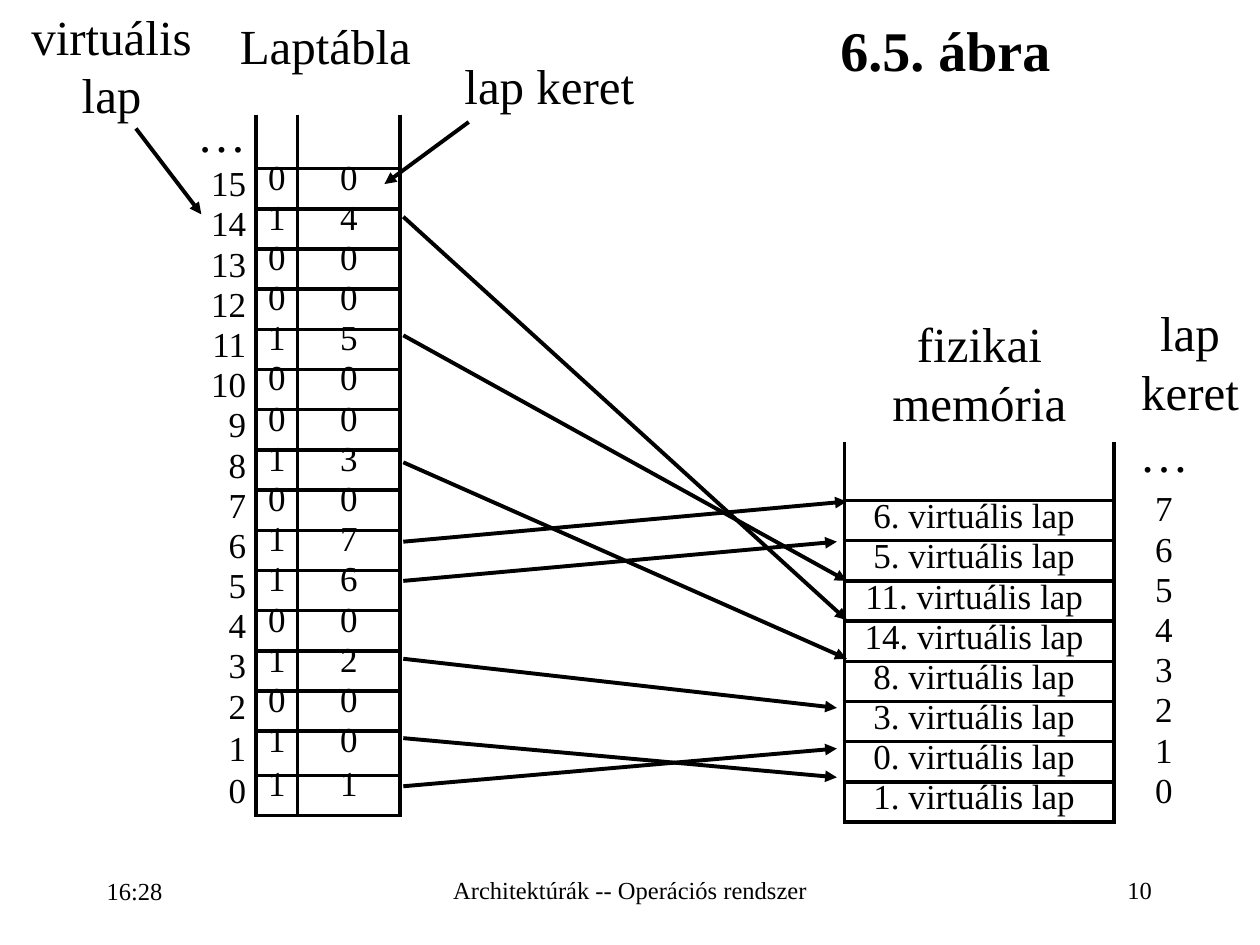
import lxml.etree
import pptx
import pptx.dml.color
import pptx.enum.shapes
import pptx.enum.text
import pptx.oxml.ns
import pptx.util

Cm = pptx.util.Cm
Pt = pptx.util.Pt
qn = pptx.oxml.ns.qn
ALIGN = pptx.enum.text.PP_ALIGN
ANCHOR = pptx.enum.text.MSO_ANCHOR

FONT = "Times New Roman"
COLORS = {"ink": "000000"}
LINE_WIDTH = Pt(2.25)
ROW_HEIGHT = 0.81
NO_GRID_STYLE = "{2D5ABB26-0587-4C30-8999-92F81FD0307C}"
TABLE_PARAGRAPH = {"line_spacing": 0.69, "space_before": Pt(8)}
FOOTER_PARAGRAPH = {"line_spacing": 0.93}

# Page table from virtual page 15 down to 0: (present bit, page frame)
PAGE_TABLE = [(0, 0), (1, 4), (0, 0), (0, 0), (1, 5), (0, 0), (0, 0), (1, 3),
              (0, 0), (1, 7), (1, 6), (0, 0), (1, 2), (0, 0), (1, 0), (1, 1)]
# Virtual pages held in frames 7 down to 0
FRAMES = [6, 5, 11, 14, 8, 3, 0, 1]

# Arrows from page table to memory: (start y, end x, end y)
MAPPINGS = [(15.85, 16.87, 15.09), (13.28, 16.87, 14.27),
            (11.71, 16.87, 10.92), (10.92, 17.07, 10.11),
            (9.32, 17.07, 13.28), (6.76, 17.07, 11.71),
            (4.37, 17.07, 12.5), (14.88, 16.87, 15.67)]


def set_attributes(target, values):
    for name, value in values.items():
        setattr(target, name, value)


def write_text(text_frame, text, size, align, paragraph_format, bold=False):
    paragraph = text_frame.paragraphs[0]
    set_attributes(paragraph, {"alignment": align, **paragraph_format})
    run = paragraph.add_run()
    run.text = text
    set_attributes(run.font, {"name": FONT, "size": Pt(size), "bold": bold})
    run.font.color.rgb = pptx.dml.color.RGBColor.from_string(COLORS["ink"])


def add_label(slide, box, text, size=28, align=ALIGN.CENTER,
              paragraph_format=None, bold=False, anchor=ANCHOR.TOP):
    shape = slide.shapes.add_textbox(*(Cm(length) for length in box))
    set_attributes(shape.text_frame,
                   {"word_wrap": True, "vertical_anchor": anchor})
    write_text(shape.text_frame, text, size, align, paragraph_format or {}, bold)


def add_arrow(slide, start, end):
    connector = slide.shapes.add_connector(
        pptx.enum.shapes.MSO_CONNECTOR.STRAIGHT,
        *(Cm(length) for length in start + end))
    connector.line.width = LINE_WIDTH
    connector.line.color.rgb = pptx.dml.color.RGBColor.from_string(COLORS["ink"])
    lxml.etree.SubElement(connector.line._get_or_add_ln(), qn("a:tailEnd"),
                          type="triangle")
    lxml.etree.SubElement(connector._element.spPr, qn("a:effectLst"))


def set_borders(cell, sides):
    properties = cell._tc.get_or_add_tcPr()
    for side in sides:
        line = lxml.etree.SubElement(properties, qn("a:ln" + side),
                                     w=str(int(LINE_WIDTH)))
        fill = lxml.etree.SubElement(line, qn("a:solidFill"))
        lxml.etree.SubElement(fill, qn("a:srgbClr"), val=COLORS["ink"])


def fill_cell(cell, text, align, anchor, right_margin, sides):
    set_borders(cell, sides)
    cell.fill.background()
    set_attributes(cell, {"margin_left": 0, "margin_top": 0, "margin_bottom": 0,
                          "margin_right": Cm(right_margin),
                          "vertical_anchor": anchor})
    if text:
        size = 28 if text == "…" else 20
        write_text(cell.text_frame, text, size, align, TABLE_PARAGRAPH)


def add_grid(slide, left, top, widths, heights, rows, columns):
    """Each column is (alignment, anchor, right margin, border sides)."""
    table = slide.shapes.add_table(
        len(rows), len(widths), Cm(left), Cm(top),
        Cm(sum(widths)), Cm(sum(heights))).table
    set_attributes(table, {"first_row": False, "horz_banding": False})
    table._tbl.tblPr.find(qn("a:tableStyleId")).text = NO_GRID_STYLE
    for column, width in zip(table.columns, widths):
        column.width = Cm(width)
    for row, height in zip(table.rows, heights):
        row.height = Cm(height)
    for row_index, texts in enumerate(rows):
        for column_index, text in enumerate(texts):
            align, anchor, margin, sides = columns[column_index]
            if row_index == 0:  # the open top row has no upper border
                sides = [side for side in sides if side != "T"]
            fill_cell(table.cell(row_index, column_index), text,
                      align, anchor, margin, sides)


def add_page_table(slide):
    last_page = len(PAGE_TABLE) - 1
    rows = [("…", "", "")] + [
        (str(last_page - index), str(present), str(frame))
        for index, (present, frame) in enumerate(PAGE_TABLE)]
    heights = [1.09] + [ROW_HEIGHT] * 14 + [0.89, ROW_HEIGHT]
    value = (ALIGN.CENTER, ANCHOR.TOP, 0, "LRTB")
    add_grid(slide, 3, 2.31, [2.16, 0.84, 2.06], heights, rows,
             [(ALIGN.RIGHT, ANCHOR.MIDDLE, 0.2, "R"), value, value])


def add_physical_memory(slide):
    last_frame = len(FRAMES) - 1
    rows = [("", "…")] + [(f"{page}. virtuális lap", str(last_frame - index))
                          for index, page in enumerate(FRAMES)]
    heights = [1.17] + [ROW_HEIGHT] * len(FRAMES)
    add_grid(slide, 17.02, 8.92, [5.44, 2.01], heights, rows,
             [(ALIGN.CENTER, ANCHOR.MIDDLE, 0.2, "LRTB"),
              (ALIGN.CENTER, ANCHOR.TOP, 0, "L")])


def add_footer(slide):
    for box, text, align in [
            ((1.9, 17.3, 5.26, 1.37), "16:28", ALIGN.LEFT),
            ((8.69, 17.35, 8.03, 1.24), "Architektúrák -- Operációs rendszer",
             ALIGN.CENTER),
            ((18.21, 17.35, 5.26, 1.24), "10", ALIGN.RIGHT)]:
        add_label(slide, box, text, 14, align, FOOTER_PARAGRAPH,
                  anchor=ANCHOR.MIDDLE)


def main():
    presentation = pptx.Presentation()
    set_attributes(presentation,
                   {"slide_width": Cm(25.4), "slide_height": Cm(19.05)})
    slide = presentation.slides.add_slide(presentation.slide_layouts[6])

    # Tables
    add_page_table(slide)
    add_physical_memory(slide)

    # Title and captions
    add_label(slide, (16.69, 0.56, 8.71, 1.75), "6.5. ábra", 32, ALIGN.LEFT,
              TABLE_PARAGRAPH, bold=True)
    add_label(slide, (4.45, 0.53, 4.22, 1.6), "Laptábla",
              paragraph_format={"line_spacing": 0.69})
    for box, text in [((17.32, 6.2, 4.85, 2.62), "fizikai memória"),
                      ((22.58, 5.97, 2.82, 2.62), "lap keret"),
                      ((0, 0, 4.5, 2.62), "virtuális lap"),
                      ((8.99, 0.99, 4.17, 1.45), "lap keret")]:
        add_label(slide, box, text)

    # Arrows from pages to frames, then from captions to the page table
    for start_y, end_x, end_y in MAPPINGS:
        add_arrow(slide, (8.13, start_y), (end_x, end_y))
    add_arrow(slide, (2.74, 2.59), (4.06, 4.32))
    add_arrow(slide, (9.45, 2.46), (7.75, 3.71))

    add_footer(slide)
    presentation.save("out.pptx")


if __name__ == "__main__":
    main()
